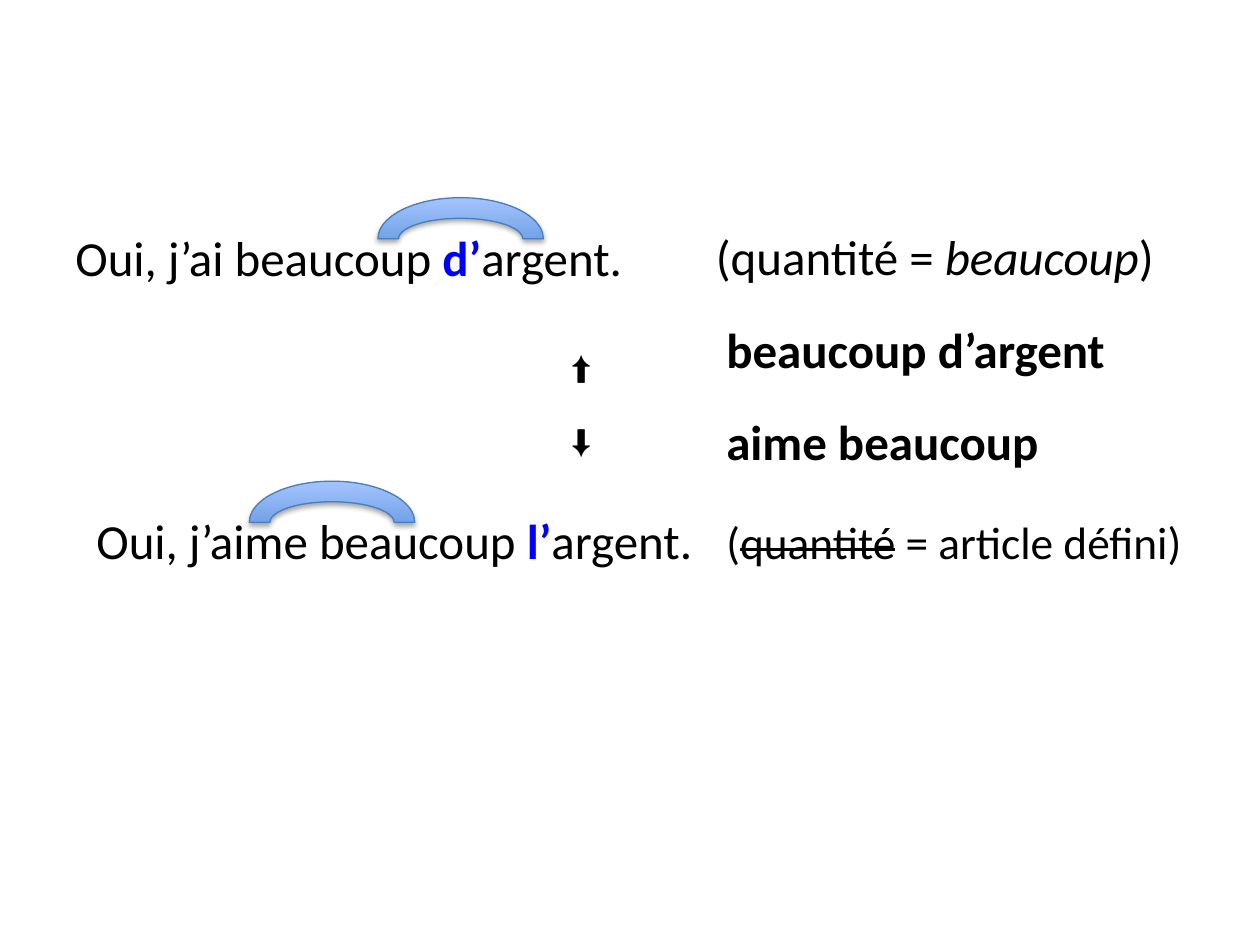
from lxml import etree
from pptx import Presentation
from pptx import util as u
from pptx.dml.color import RGBColor
from pptx.enum import shapes, text
from pptx.oxml import ns

BLACK, BLUE = "000000", "0000FF"


def color(value):
    return RGBColor.from_string(value)


def add_run(paragraph, content, font="Calibri", size=28, fill=BLACK,
            bold=False, italic=False, strike=False):
    run = paragraph.add_run()
    run.text = content
    run.font.name = font
    run.font.size = u.Pt(size)
    run.font.bold = bold
    run.font.italic = italic
    run.font.color.rgb = color(fill)
    if strike:
        run._r.get_or_add_rPr().set("strike", "sngStrike")


def add_soft_shadow(shape):
    """Put a faint shadow straight below the shape."""
    shape.shadow.inherit = False
    effects = shape._element.spPr.find(ns.qn("a:effectLst"))
    shadow = etree.SubElement(
        effects, ns.qn("a:outerShdw"), blurRad=str(u.Pt(3.1)),
        dist=str(u.Pt(1.8)), dir="5400000", rotWithShape="0")
    shade = etree.SubElement(shadow, ns.qn("a:srgbClr"), val=BLACK)
    etree.SubElement(shade, ns.qn("a:alpha"), val="35000")


class GrammarSlide:
    """Holds the slide and the style of its sentences, arrows and arcs."""

    line_height = 53.3
    arc_size = (94.5, 47)
    arc_gradient = ("3F80CE", "A4C4FF")
    arc_outline = "4B7EBC"

    def __init__(self, presentation):
        self.slide = presentation.slides.add_slide(presentation.slide_layouts[6])

    def add_frame(self, left, top, width, height, wrap=True):
        box = self.slide.shapes.add_textbox(*map(u.Pt, (left, top, width, height)))
        box.text_frame.word_wrap = wrap
        return box.text_frame

    def add_sentence(self, left, top, width, *runs):
        """Write one line from (text, format) pairs."""
        frame = self.add_frame(left, top, width, self.line_height)
        for content, style in runs:
            add_run(frame.paragraphs[0], content, **style)

    def add_arrows(self, left, top, width, height, gap):
        frame = self.add_frame(left, top, width, height, wrap=False)
        frame.auto_size = text.MSO_AUTO_SIZE.SHAPE_TO_FIT_TEXT
        add_run(frame.paragraphs[0], "⬆", font="Arial", size=18)
        paragraph = frame.add_paragraph()
        paragraph.space_before = u.Pt(gap)
        add_run(paragraph, "⬇", font="Arial", size=18)

    def add_arc(self, left, top):
        arc = self.slide.shapes.add_shape(
            shapes.MSO_SHAPE.BLOCK_ARC, *map(u.Pt, (left, top, *self.arc_size)))
        arc.fill.gradient()
        arc.fill.gradient_angle = 90
        for position, (stop, value) in enumerate(
                zip(arc.fill.gradient_stops, self.arc_gradient)):
            stop.position = position
            stop.color.rgb = color(value)
        arc.line.color.rgb = color(self.arc_outline)
        arc.line.width = u.Pt(0.75)
        add_soft_shadow(arc)


def main():
    presentation = Presentation()
    presentation.slide_width, presentation.slide_height = u.Pt(720), u.Pt(540)
    slide = GrammarSlide(presentation)

    sentence_width, note_width, note_left = 372, 282, 408
    bold, article = {"bold": True}, {"bold": True, "fill": BLUE}
    small = {"size": 25.9}

    slide.add_sentence(36, 126.5, sentence_width, ("Oui, j’ai beaucoup ", {}),
                       ("d’", article), ("argent.", {}))
    slide.add_sentence(402, 126, note_width, ("(quantité = ", {}),
                       ("beaucoup", {"italic": True}), (")", {}))
    slide.add_sentence(48, 288, sentence_width, ("Oui, j’aime beaucoup ", {}),
                       ("l’", article), ("argent.", {}))
    slide.add_sentence(note_left, 290, note_width, ("(", small),
                       ("quantité", {"strike": True, **small}),
                       (" = article défini)", small))
    slide.add_sentence(note_left, 179, note_width, ("beaucoup d’argent", bold))
    slide.add_sentence(note_left, 231.5, note_width, ("aime beaucoup", bold))

    slide.add_arrows(319.5, 195, 32.5, 72.7, gap=20.7)
    slide.add_arc(142.5, 275)
    slide.add_arc(216, 113)
    presentation.save("out.pptx")


if __name__ == "__main__":
    main()
